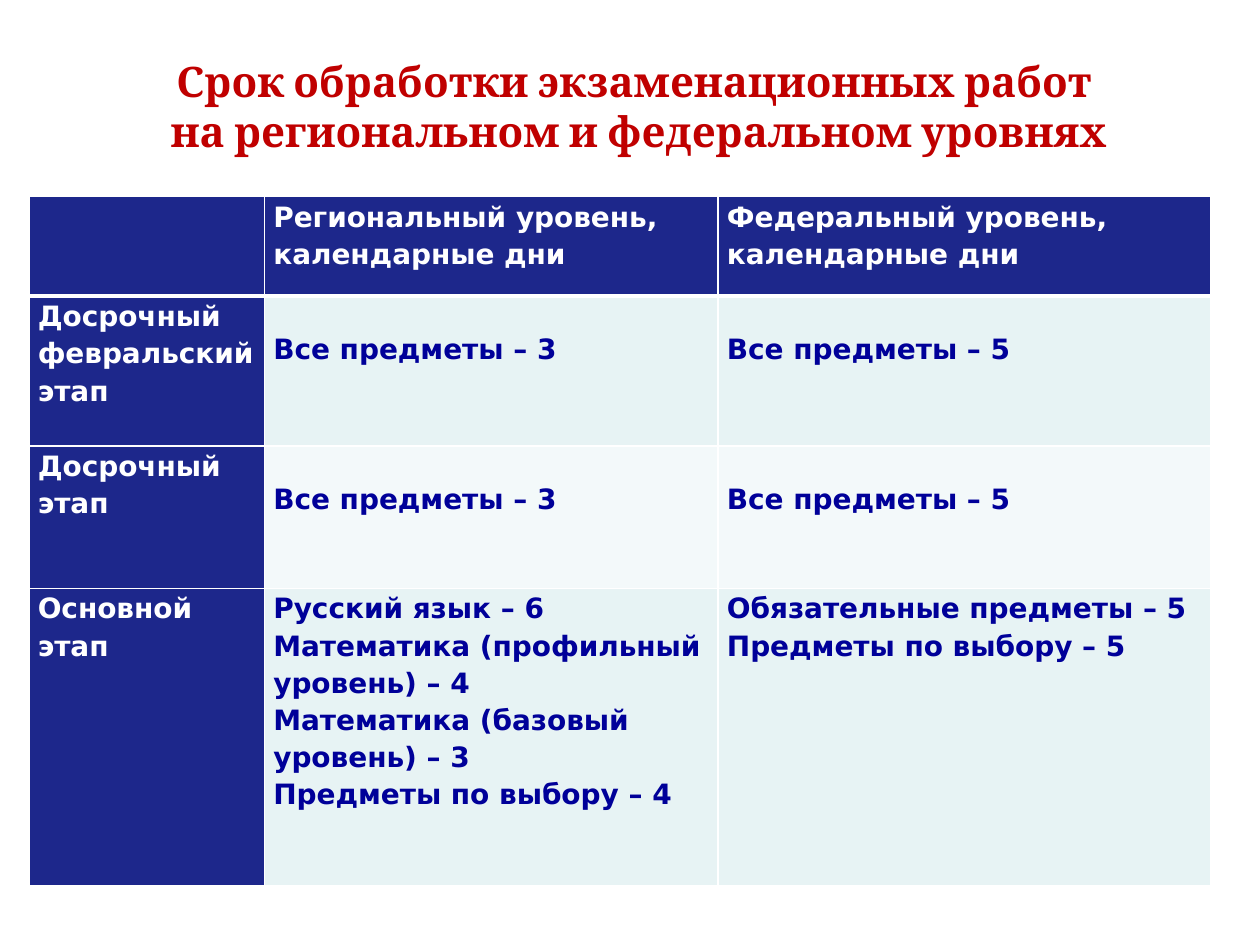
from dataclasses import dataclass

from lxml.etree import SubElement
from pptx import Presentation
from pptx.dml.color import RGBColor
from pptx.enum.text import MSO_ANCHOR, PP_ALIGN
from pptx.oxml.ns import qn
from pptx.util import Inches, Pt


@dataclass(frozen=True)
class Theme:
    """Colours, fonts and type sizes of the slide."""

    title_color: str = "C00000"
    header_fill: str = "1D278B"
    header_text: str = "FFFFFF"
    body_text: str = "000099"
    band_fills: tuple = ("E7F3F4", "F3F9FA")
    border: str = "FFFFFF"
    title_font: str = "Cambria"
    table_font: str = "DejaVu Sans"
    title_size: int = 24
    table_size: int = 16
    thin_line: int = 1
    thick_line: int = 3


THEME = Theme()
TITLE = "Срок обработки экзаменационных работ \vна региональном и федеральном уровнях"
COLUMN_WIDTHS = (1.87, 3.6, 3.91)
ROW_HEIGHTS = (0.79, 1.19, 1.13, 2.36)
LOWERED_ROWS = (1, 2)
ROWS = (
    ("", "Региональный уровень, календарные дни", "Федеральный уровень, календарные дни"),
    ("Досрочный февральский этап", "Все предметы – 3", "Все предметы – 5"),
    ("Досрочный этап", "Все предметы – 3", "Все предметы – 5"),
    (
        "Основной этап",
        "Русский язык – 6\nМатематика (профильный уровень) – 4\n"
        "Математика (базовый уровень) – 3\nПредметы по выбору – 4",
        "Обязательные предметы – 5 Предметы по выбору – 5",
    ),
)


def set_values(target, values):
    """Set each attribute named in values on the target."""
    for name, value in values.items():
        setattr(target, name, value)


def format_text(frame, paragraph_format, font_format, color):
    """Apply paragraph and font formats to all text in a frame."""
    for para in frame.paragraphs:
        set_values(para, paragraph_format)
        for span in para.runs:
            set_values(span.font, font_format)
            span.font.color.rgb = RGBColor.from_string(color)


def add_title(page):
    """Add the centred two-line heading."""
    box = page.shapes.add_textbox(Inches(0.31), Inches(0.39), Inches(9.52), Inches(0.91))
    box.text_frame.word_wrap = True
    box.text_frame.text = TITLE
    font_format = {"name": THEME.title_font, "size": Pt(THEME.title_size), "bold": True}
    format_text(box.text_frame, {"alignment": PP_ALIGN.CENTER}, font_format, THEME.title_color)


def add_borders(cell, row_index):
    """Draw cell borders, with a thick rule below the header row."""
    thick_side = {0: "lnB", 1: "lnT"}.get(row_index)
    properties = cell._tc.get_or_add_tcPr()
    for position, side in enumerate(("lnL", "lnR", "lnT", "lnB")):
        width = THEME.thick_line if side == thick_side else THEME.thin_line
        line = SubElement(properties, qn(f"a:{side}"), w=str(Pt(width)))
        fill = SubElement(line, qn("a:solidFill"))
        SubElement(fill, qn("a:srgbClr"), val=THEME.border)
        properties.insert(position, line)


def style_cell(cell, row_index, column_index):
    """Fill one cell and format its text by its place in the table."""
    is_header = row_index == 0 or column_index == 0
    band_fill = THEME.band_fills[(row_index - 1) % 2]
    is_lowered = row_index in LOWERED_ROWS and not is_header
    cell.fill.solid()
    cell.fill.fore_color.rgb = RGBColor.from_string(THEME.header_fill if is_header else band_fill)
    set_values(cell, {
        "margin_left": Inches(0.07),
        "margin_right": Inches(0.07),
        "margin_top": Inches(0.26 if is_lowered else 0),
        "margin_bottom": Inches(0),
        "vertical_anchor": MSO_ANCHOR.TOP,
    })
    font_format = {"name": THEME.table_font, "size": Pt(THEME.table_size), "bold": True}
    color = THEME.header_text if is_header else THEME.body_text
    format_text(cell.text_frame, {"line_spacing": 1.15}, font_format, color)
    add_borders(cell, row_index)


def add_schedule_table(page):
    """Add the table of processing times."""
    table = page.shapes.add_table(
        len(ROWS), len(COLUMN_WIDTHS), Inches(0.23), Inches(1.56),
        Inches(sum(COLUMN_WIDTHS)), Inches(sum(ROW_HEIGHTS)),
    ).table
    for column, width in zip(table.columns, COLUMN_WIDTHS):
        column.width = Inches(width)
    for row, height in zip(table.rows, ROW_HEIGHTS):
        row.height = Inches(height)
    for row_index, texts in enumerate(ROWS):
        for column_index, text in enumerate(texts):
            cell = table.cell(row_index, column_index)
            cell.text = text
            style_cell(cell, row_index, column_index)


def main():
    """Build and save the slide."""
    deck = Presentation()
    set_values(deck, {"slide_width": Inches(10), "slide_height": Inches(7.5)})
    page = deck.slides.add_slide(deck.slide_layouts[6])
    add_title(page)
    add_schedule_table(page)
    deck.save("out.pptx")


if __name__ == "__main__":
    main()
